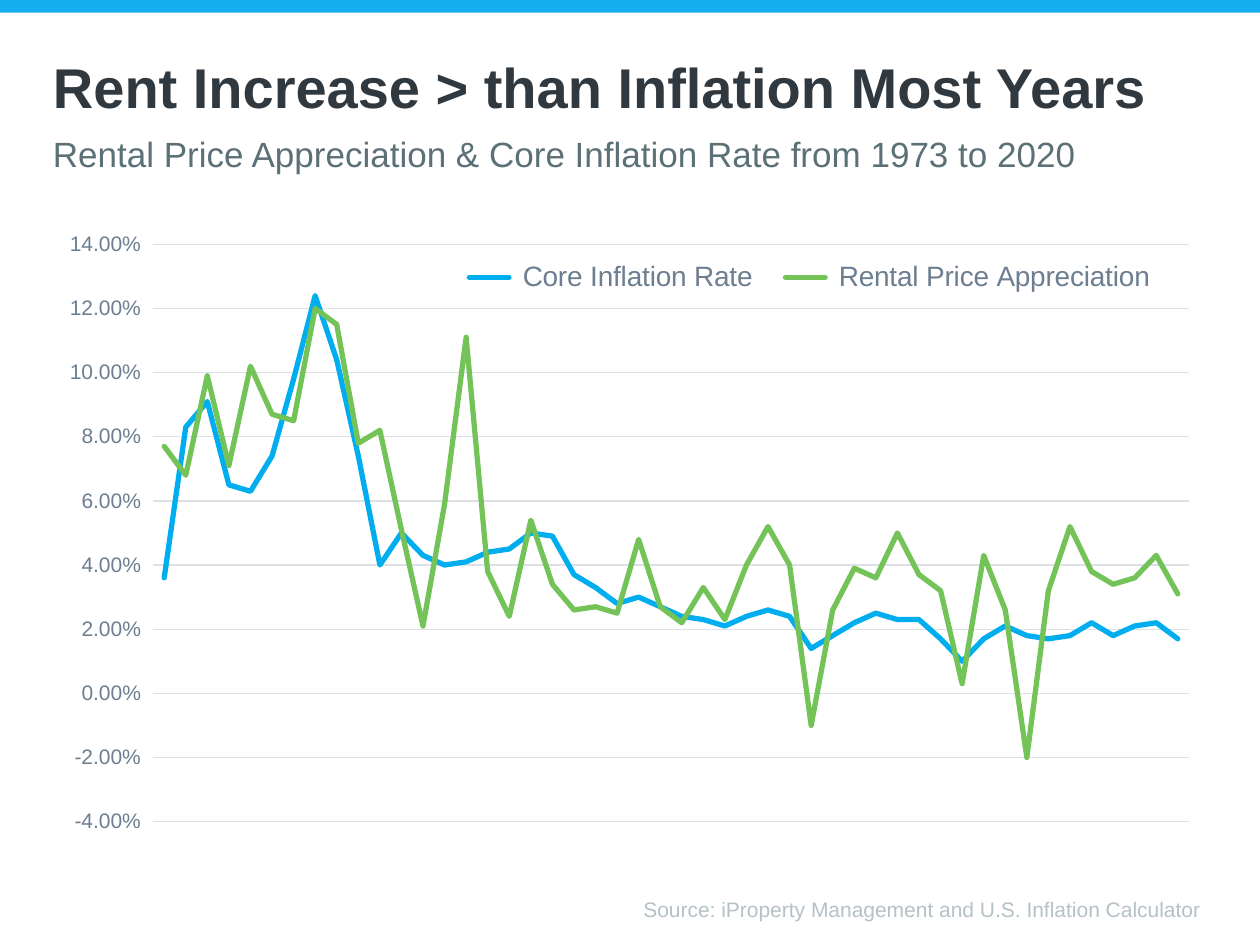
from dataclasses import dataclass

from lxml.etree import SubElement as Sub
from pptx import Presentation as Deck
from pptx.chart.data import CategoryChartData as Data
from pptx.dml.color import RGBColor as Rgb
from pptx.enum.chart import XL_CHART_TYPE as Kind
from pptx.enum.chart import XL_LEGEND_POSITION as Spot
from pptx.enum.chart import XL_TICK_LABEL_POSITION as Label
from pptx.enum.chart import XL_TICK_MARK as Tick
from pptx.enum.shapes import MSO_SHAPE as Shape
from pptx.enum.text import MSO_ANCHOR as Anchor
from pptx.enum.text import MSO_AUTO_SIZE as Auto
from pptx.enum.text import PP_ALIGN as Align
from pptx.oxml.ns import qn
from pptx.util import Inches, Pt


@dataclass
class Theme:
    font: str = "Arial"
    bar: str = "14ADF0"
    title: str = "303840"
    sub: str = "5B7077"
    source: str = "B4C1C6"
    label: str = "6C7E90"
    grid: str = "DDE1E5"
    core: str = "00AEEF"
    rent: str = "73C359"
    title_size: int = 32
    sub_size: int = 20
    legend_size: int = 16
    small_size: int = 12
    base_size: int = 10


theme = Theme()


def write(holder, text, *, box, size, color, bold=False, align=Align.LEFT, inset=0, space=1):
    holder.left, holder.top, holder.width, holder.height = map(Inches, box)
    frame = holder.text_frame
    frame.text = text
    frame.word_wrap = True
    frame.auto_size = Auto.NONE
    frame.vertical_anchor = Anchor.TOP
    frame.margin_left = frame.margin_right = 0
    frame.margin_top = frame.margin_bottom = Inches(inset)
    para = frame.paragraphs[0]
    props = para._p.get_or_add_pPr()
    props.set("marL", "0")
    props.set("indent", "0")
    Sub(props, qn("a:buNone"))
    para.alignment = align
    para.line_spacing = space
    para.space_before = Pt(0)
    style(para.font, size, color, bold)


def style(font, size, color, bold=False):
    font.name = theme.font
    font.size = Pt(size)
    font.bold = bold
    font.color.rgb = Rgb.from_string(color)


deck = Deck()
deck.slide_width, deck.slide_height = Inches(10), Inches(7.5)
slide = deck.slides.add_slide(deck.slide_layouts[3])
title, sub, source = slide.placeholders

bar = slide.shapes.add_shape(Shape.RECTANGLE, 0, 0, Inches(10), Inches(0.1))
bar.shadow.inherit = False
bar.fill.solid()
bar.fill.fore_color.rgb = Rgb.from_string(theme.bar)
bar.line.fill.background()

write(title, "Rent Increase > than Inflation Most Years",
      box=(0.42, 0.42, 9.17, 0.39), size=theme.title_size, color=theme.title, bold=True)
write(sub, "Rental Price Appreciation & Core Inflation Rate from 1973 to 2020",
      box=(0.42, 1.05, 9.17, 0.34), size=theme.sub_size, color=theme.sub)
write(source, "Source: iProperty Management and U.S. Inflation Calculator ",
      box=(0.42, 7.09, 9.16, 0.24), size=theme.small_size, color=theme.source,
      align=Align.RIGHT, inset=0.05, space=0.9)

core = [
    36, 83, 91, 65, 63, 74, 98, 124, 104, 74, 40, 50, 43, 40, 41, 44,
    45, 50, 49, 37, 33, 28, 30, 27, 24, 23, 21, 24, 26, 24, 14, 18,
    22, 25, 23, 23, 17, 10, 17, 21, 18, 17, 18, 22, 18, 21, 22, 17,
]
rent = [
    77, 68, 99, 71, 102, 87, 85, 120, 115, 78, 82, 51, 21, 59, 111, 38,
    24, 54, 34, 26, 27, 25, 48, 27, 22, 33, 23, 40, 52, 40, -10, 26,
    39, 36, 50, 37, 32, 3, 43, 26, -20, 32, 52, 38, 34, 36, 43, 31,
]
data = Data(number_format="0.00%")
data.categories = [str(n + 1) for n in range(len(core))]
for name, mills in ((" Core Inflation Rate", core), (" Rental Price Appreciation", rent)):
    data.add_series(name, [mill / 1000 for mill in mills])

chart = slide.shapes.add_chart(
    Kind.LINE, Inches(0.42), Inches(1.79), Inches(9.17), Inches(4.82), data).chart
chart.has_title = False
style(chart.font, theme.base_size, theme.title)

for line, color in zip(chart.plots[0].series, (theme.core, theme.rent)):
    line.smooth = False
    line.format.line.width = Pt(3)
    line.format.line.color.rgb = Rgb.from_string(color)
    edge = line._element.find(".//" + qn("a:ln"))
    edge.set("cap", "rnd")
    Sub(edge, qn("a:round"))

chart.category_axis.visible = False
axis = chart.value_axis
axis.minimum_scale, axis.maximum_scale, axis.major_unit = -0.04, 0.14, 0.02
axis.major_tick_mark = axis.minor_tick_mark = Tick.NONE
axis.tick_label_position = Label.LOW
axis.tick_labels.number_format = "0.00%"
axis.tick_labels.number_format_is_linked = False
style(axis.tick_labels.font, theme.small_size, theme.label)
axis.format.line.fill.background()
axis.major_gridlines.format.line.width = Pt(0.75)
axis.major_gridlines.format.line.color.rgb = Rgb.from_string(theme.grid)

chart.has_legend = True
legend = chart.legend
legend.position = Spot.BOTTOM
legend.include_in_layout = False
style(legend.font, theme.legend_size, theme.label)

area = chart._chartSpace.find(".//" + qn("c:plotArea"))
for part, place, box in (
    (area, 0, (0.087, 0.031, 0.896, 0.951)),
    (legend._element, 1, (0.34, 0.05, 0.63, 0.07)),
):
    for old in part.findall(qn("c:layout")):
        part.remove(old)
    layout = Sub(part, qn("c:layout"))
    part.insert(place, layout)
    manual = Sub(layout, qn("c:manualLayout"))
    if part is area:
        Sub(manual, qn("c:layoutTarget")).set("val", "inner")
    for tag in ("xMode", "yMode"):
        Sub(manual, qn("c:" + tag)).set("val", "edge")
    for tag, size in zip("xywh", box):
        Sub(manual, qn("c:" + tag)).set("val", str(size))

deck.save("out.pptx")
